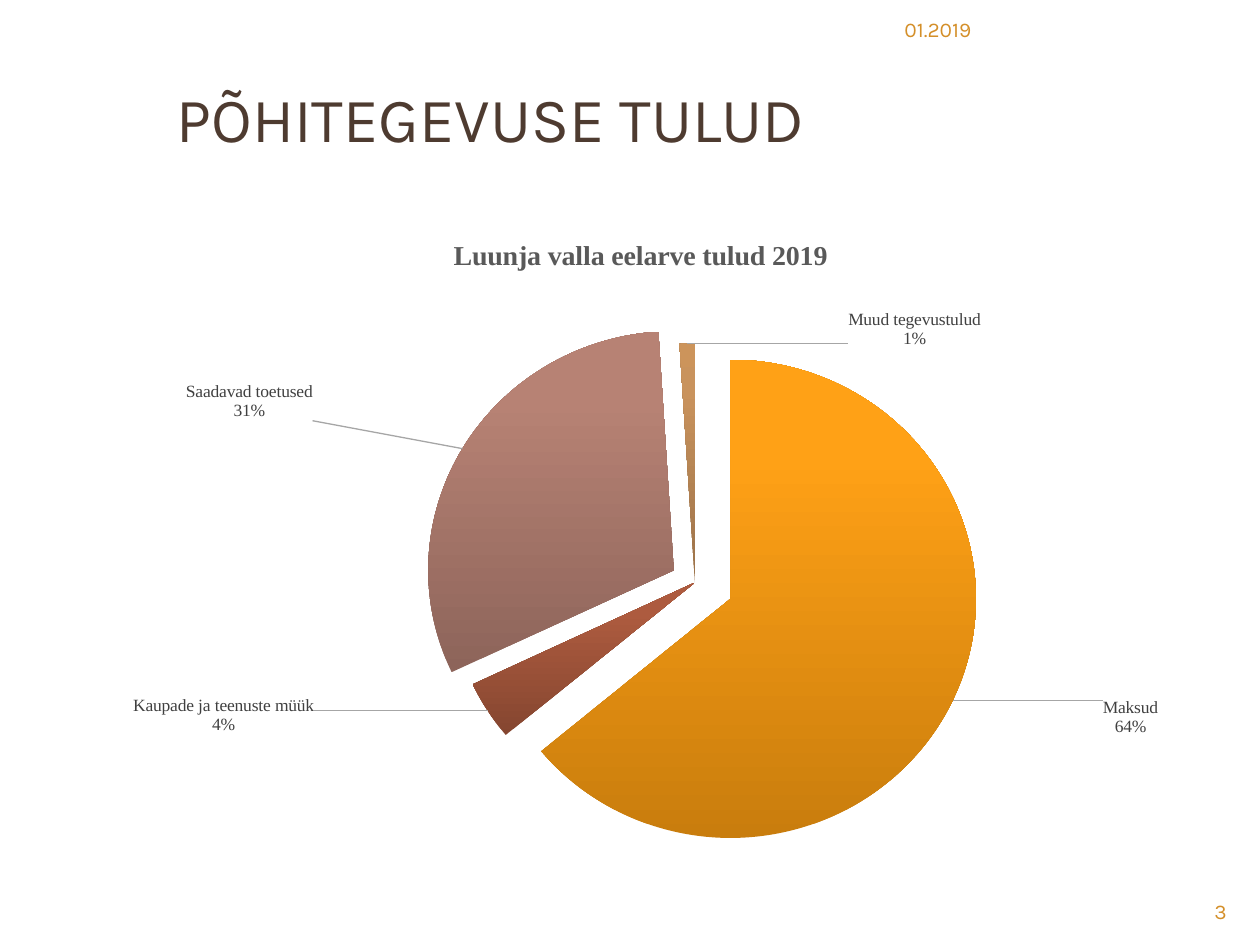
from copy import deepcopy

from pptx import Presentation
from pptx.chart.data import CategoryChartData
from pptx.dml.color import RGBColor
from pptx.enum.chart import XL_CHART_TYPE as ChartType, XL_LABEL_POSITION as LabelPosition
from pptx.enum.text import MSO_ANCHOR as Anchor, PP_ALIGN as Align
from pptx.oxml import parse_xml
from pptx.oxml.ns import nsdecls
from pptx.util import Pt

EMU_PER_PX = 914400 / 126
HEADING_FONT, CHART_FONT = "Karla", "Times New Roman"
COLORS = {
    "heading": "4E3B30",
    "accent": "D48F29",
    "chart_title": "595959",
    "label": "404040",
    "leader": "A6A6A6",
}
CHART_PX = (42, 214, 1197, 624)
PLOT_LAYOUT = {"x": 0.309, "y": 0.213, "w": 0.473, "h": 0.787}
REVENUES = [
    ("Maksud", 64, 16, ("C97D0D", "FFA116", "FFA217"), (139, -8)),
    ("Kaupade ja teenuste müük", 4, 0, ("854630", "AD5B3F", "AF5A3D"), (-164, -17)),
    ("Saadavad toetused", 31, 10, ("8D645A", "B78274", "B98274"), (-149, -25)),
    ("Muud tegevustulud", 1, 0, ("9B7148", "C9935D", "CC945B"), (231, 12)),
]


def px(length):
    """Turn pixels into EMU."""
    return round(length * EMU_PER_PX)


def style_font(font, size, color, name, bold=False):
    """Set the face, size, colour and weight of a font."""
    font.name, font.size, font.bold = name, Pt(size), bold
    font.color.rgb = RGBColor.from_string(COLORS[color])


def set_title(slide, text, box):
    """Move, fill and format the title placeholder."""
    title = slide.shapes.title
    title.left, title.top, title.width, title.height = map(px, box)
    frame = title.text_frame
    frame.text = text
    frame.vertical_anchor = Anchor.MIDDLE
    paragraph = frame.paragraphs[0]
    paragraph.alignment = Align.LEFT
    style_font(paragraph.runs[0].font, 36, "heading", HEADING_FONT)


def add_note(slide, text, box, align):
    """Add a small accent-coloured text such as the date or page number."""
    frame = slide.shapes.add_textbox(*map(px, box)).text_frame
    frame.word_wrap = True
    frame.text = text
    paragraph = frame.paragraphs[0]
    paragraph.alignment = align
    style_font(paragraph.runs[0].font, 12, "accent", HEADING_FONT)


def manual_layout(values, inner=False):
    """Build a chart layout element from fractions of the chart."""
    target = '<c:layoutTarget val="inner"/>' if inner else ""
    modes = '<c:xMode val="edge"/><c:yMode val="edge"/>' if inner else ""
    fractions = "".join(f'<c:{key} val="{value}"/>' for key, value in values.items())
    return parse_xml(
        f'<c:layout {nsdecls("c")}><c:manualLayout>{target}{modes}{fractions}'
        "</c:manualLayout></c:layout>"
    )


def slice_format(index, explosion, stops):
    """Build the format of one pulled-out slice with a rising gradient."""
    gradient = "".join(
        f'<a:gs pos="{place * 1000}"><a:srgbClr val="{color}"/></a:gs>'
        for place, color in zip((0, 80, 100), stops)
    )
    return parse_xml(
        f'<c:dPt {nsdecls("c", "a")}><c:idx val="{index}"/><c:bubble3D val="0"/>'
        f'<c:explosion val="{explosion}"/><c:spPr><a:gradFill><a:gsLst>{gradient}'
        '</a:gsLst><a:lin ang="16200000" scaled="0"/></a:gradFill>'
        "<a:ln><a:noFill/></a:ln></c:spPr></c:dPt>"
    )


def label_slices(chart):
    """Show category and percentage beside each slice, with leader lines."""
    labels = chart.plots[0].series[0].data_labels
    style_font(labels.font, 10, "label", CHART_FONT)
    labels.number_format, labels.number_format_is_linked = "0%", False
    labels.position = LabelPosition.OUTSIDE_END
    labels.show_value = False
    labels.show_category_name = labels.show_percentage = True

    group = chart.element.xpath(".//c:ser/c:dLbls")[0]
    for old in group.xpath("c:showLeaderLines"):
        group.remove(old)
    group.append(parse_xml(f'<c:separator {nsdecls("c")}>\n</c:separator>'))
    shared = list(group)
    for index, (*_, (dx, dy)) in enumerate(REVENUES):
        label = parse_xml(f'<c:dLbl {nsdecls("c")}><c:idx val="{index}"/></c:dLbl>')
        shift = {"x": round(dx / CHART_PX[2], 2), "y": round(dy / CHART_PX[3], 2)}
        label.append(manual_layout(shift))
        label.extend(deepcopy(part) for part in shared)
        group.insert(index, label)
    group.append(parse_xml(f'<c:showLeaderLines {nsdecls("c")} val="1"/>'))
    group.append(parse_xml(
        f'<c:leaderLines {nsdecls("c", "a")}><c:spPr><a:ln w="9525"><a:solidFill>'
        f'<a:srgbClr val="{COLORS["leader"]}"/></a:solidFill></a:ln></c:spPr></c:leaderLines>'
    ))


def add_revenue_pie(slide):
    """Add the pie chart of revenues."""
    data = CategoryChartData()
    data.categories = [name for name, *_ in REVENUES]
    data.add_series("Series 1", [share for _, share, *_ in REVENUES])
    chart = slide.shapes.add_chart(ChartType.PIE, *map(px, CHART_PX), data).chart
    chart.font.name, chart.font.size = HEADING_FONT, Pt(10)
    chart.has_legend = False
    chart.has_title = True
    heading = chart.chart_title.text_frame
    heading.text = "Luunja valla eelarve tulud 2019"
    style_font(heading.paragraphs[0].runs[0].font, 16, "chart_title", CHART_FONT, True)
    chart.plots[0].vary_by_categories = True

    plot_area = chart.element.xpath(".//c:plotArea")[0]
    for old in plot_area.xpath("c:layout"):
        plot_area.remove(old)
    plot_area.insert(0, manual_layout(PLOT_LAYOUT, inner=True))
    categories = plot_area.xpath(".//c:ser/c:cat")[0]
    for index, (_, _, explosion, stops, _) in enumerate(REVENUES):
        categories.addprevious(slice_format(index, explosion, stops))
    label_slices(chart)


def main():
    """Build the revenue slide and save it."""
    deck = Presentation()
    deck.slide_width, deck.slide_height = px(1260), px(945)
    slide = deck.slides.add_slide(deck.slide_layouts[5])
    set_title(slide, "PÕHITEGEVUSE TULUD", (164, 38, 1033, 158))
    add_note(slide, "01.2019", (892, 10, 347, 40), Align.LEFT)
    add_note(slide, "3", (1134, 892, 105, 34), Align.RIGHT)
    add_revenue_pie(slide)
    deck.save("out.pptx")


if __name__ == "__main__":
    main()
